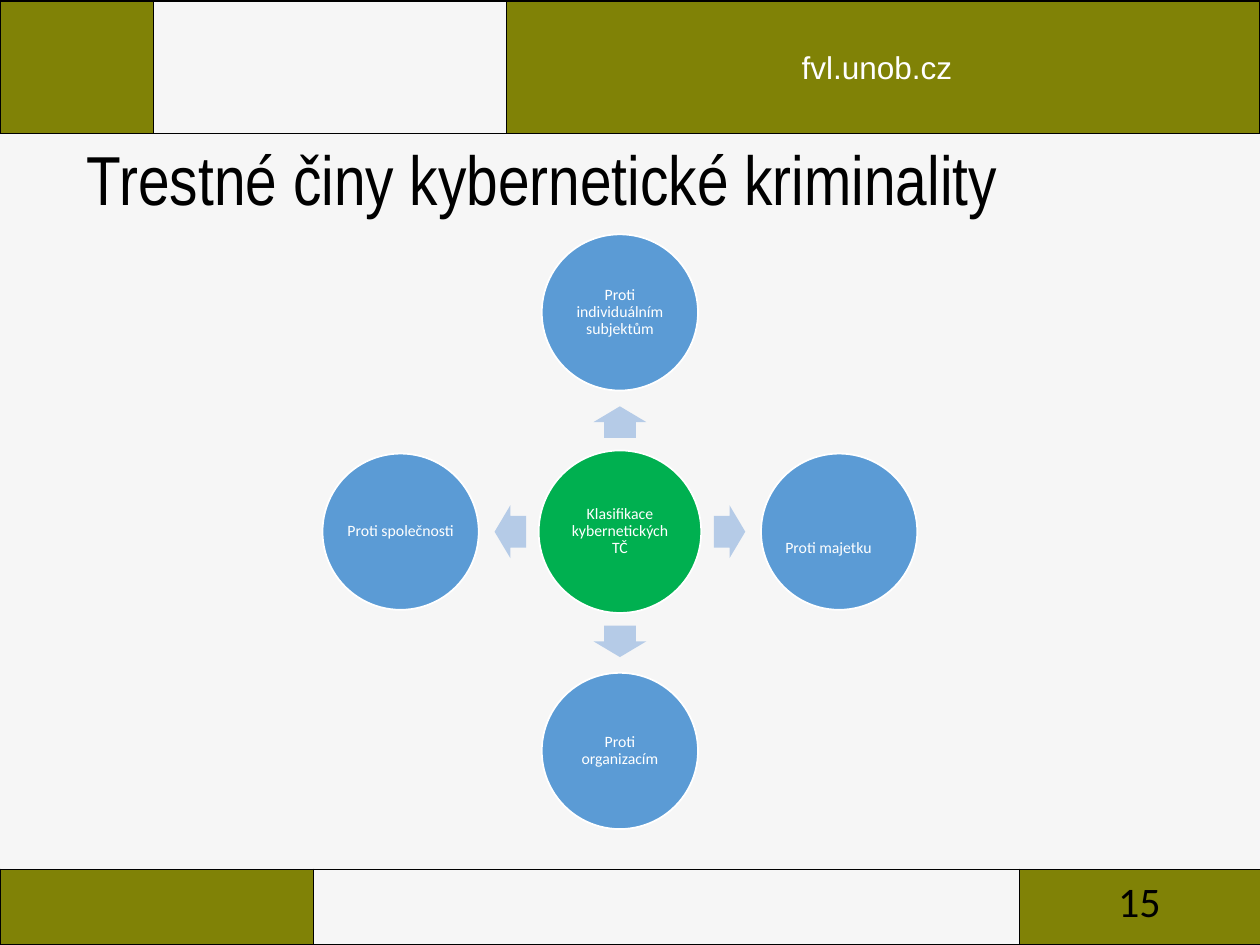
from lxml import etree
from pptx import Presentation
from pptx.dml.color import RGBColor
from pptx.enum import shapes, text
from pptx.oxml import ns
from pptx.util import Inches, Pt

COLORS = {"background": "F6F6F6", "olive": "808206", "black": "000000", "white": "FFFFFF",
          "green": "00B050", "blue": "5B9BD5", "arrow": "B5CBE7"}

# left, top, height, column widths
BANDS = [(0, 6.9, 0.6, (2.49, 5.6, 1.92)), (0, 0.01, 1.05, (1.22, 2.8, 5.98))]

# wording, box, format
LABELS = [
    ("fvl.unob.cz", (5.88, 0.33, 2.16, 0.4),
     {"font": "Arial", "size": 18, "color": "white", "align": "CENTER"}),
    ("Trestné činy kybernetické kriminality", (0.59, 1.22, 9, 0.46),
     {"font": "Arial Narrow", "size": 39.6, "color": "black", "align": "LEFT", "spacing": 0.9}),
    ("15", (7.06, 6.95, 2.25, 0.4),
     {"font": "Calibri", "size": 24, "color": "black", "align": "RIGHT"}),
]

HUB = "Klasifikace kybernetických TČ"
# wording, direction from the hub (x, y), arrow rotation, text margins
SPOKES = [
    ("Proti individuálním subjektům", (0, -1), 270, {}),
    ("Proti majetku", (1, 0), 0, {"margin_top": 0.28, "margin_right": 0.18}),
    ("Proti organizacím", (0, 1), 90, {}),
    ("Proti společnosti", (-1, 0), 180, {}),
]
CENTER = (4.92, 4.22)
HUB_SIZE, SPOKE_SIZE, ARROW_SIZE = 1.29, 1.24, (0.25, 0.42)
SPOKE_DISTANCE = 1.74
CIRCLE_TEXT = {"font": "Calibri", "size": 9, "color": "white", "align": "CENTER", "spacing": 0.9}


def rgb(name):
    return RGBColor.from_string(COLORS[name])


def write(frame, wording, style, margins=None):
    frame.word_wrap = True
    frame.vertical_anchor = text.MSO_ANCHOR.MIDDLE
    for side, inches in (margins or {}).items():
        setattr(frame, side, Inches(inches))
    paragraph = frame.paragraphs[0]
    paragraph.alignment = getattr(text.PP_ALIGN, style["align"])
    paragraph.line_spacing = style.get("spacing", 1.0)
    run = paragraph.add_run()
    run.text = wording
    run.font.name, run.font.size = style["font"], Pt(style["size"])
    run.font.color.rgb = rgb(style["color"])


def border(cell):
    properties = cell._tc.get_or_add_tcPr()
    for side in ("lnL", "lnR", "lnT", "lnB"):
        line = etree.SubElement(properties, ns.qn(f"a:{side}"), w=str(Pt(1)))
        fill = etree.SubElement(line, ns.qn("a:solidFill"))
        etree.SubElement(fill, ns.qn("a:srgbClr"), val=COLORS["black"])


def add_band(slide, left, top, height, widths):
    """Three-cell strip with olive ends and an open middle."""
    band = slide.shapes.add_table(1, len(widths), Inches(left), Inches(top),
                                  Inches(sum(widths)), Inches(height)).table
    band.first_row = band.horz_banding = False
    for index, width in enumerate(widths):
        band.columns[index].width = Inches(width)
        cell = band.cell(0, index)
        border(cell)
        if index == 1:
            cell.fill.background()
        else:
            cell.fill.solid()
            cell.fill.fore_color.rgb = rgb("olive")


def add_centered(slide, kind, center, size, color):
    left, top = (c - s / 2 for c, s in zip(center, size))
    shape = slide.shapes.add_shape(kind, Inches(left), Inches(top), *map(Inches, size))
    shape.shadow.inherit = False
    shape.fill.solid()
    shape.fill.fore_color.rgb = rgb(color)
    shape.line.fill.background()
    return shape


def add_circle(slide, wording, center, size, color, margins):
    circle = add_centered(slide, shapes.MSO_SHAPE.OVAL, center, (size, size), color)
    circle.line.color.rgb = rgb("white")
    circle.line.width = Pt(1)
    sides = ("margin_left", "margin_top", "margin_right", "margin_bottom")
    write(circle.text_frame, wording, CIRCLE_TEXT, {**dict.fromkeys(sides, 0.01), **margins})


def toward(direction, distance):
    return tuple(c + d * distance for c, d in zip(CENTER, direction))


def main():
    deck = Presentation()
    deck.slide_width, deck.slide_height = Inches(10), Inches(7.5)
    slide = deck.slides.add_slide(deck.slide_layouts[6])
    slide.background.fill.solid()
    slide.background.fill.fore_color.rgb = rgb("background")

    for band in BANDS:
        add_band(slide, *band)
    for wording, box, style in LABELS:
        label = slide.shapes.add_textbox(*map(Inches, box))
        write(label.text_frame, wording, style)

    add_circle(slide, HUB, CENTER, HUB_SIZE, "green", {})
    for wording, direction, rotation, margins in SPOKES:
        arrow = add_centered(slide, shapes.MSO_SHAPE.RIGHT_ARROW,
                             toward(direction, SPOKE_DISTANCE / 2), ARROW_SIZE, "arrow")
        arrow.adjustments[0], arrow.adjustments[1] = 0.6, 0.5
        arrow.rotation = rotation
        add_circle(slide, wording, toward(direction, SPOKE_DISTANCE), SPOKE_SIZE, "blue", margins)

    deck.save("out.pptx")


if __name__ == "__main__":
    main()
